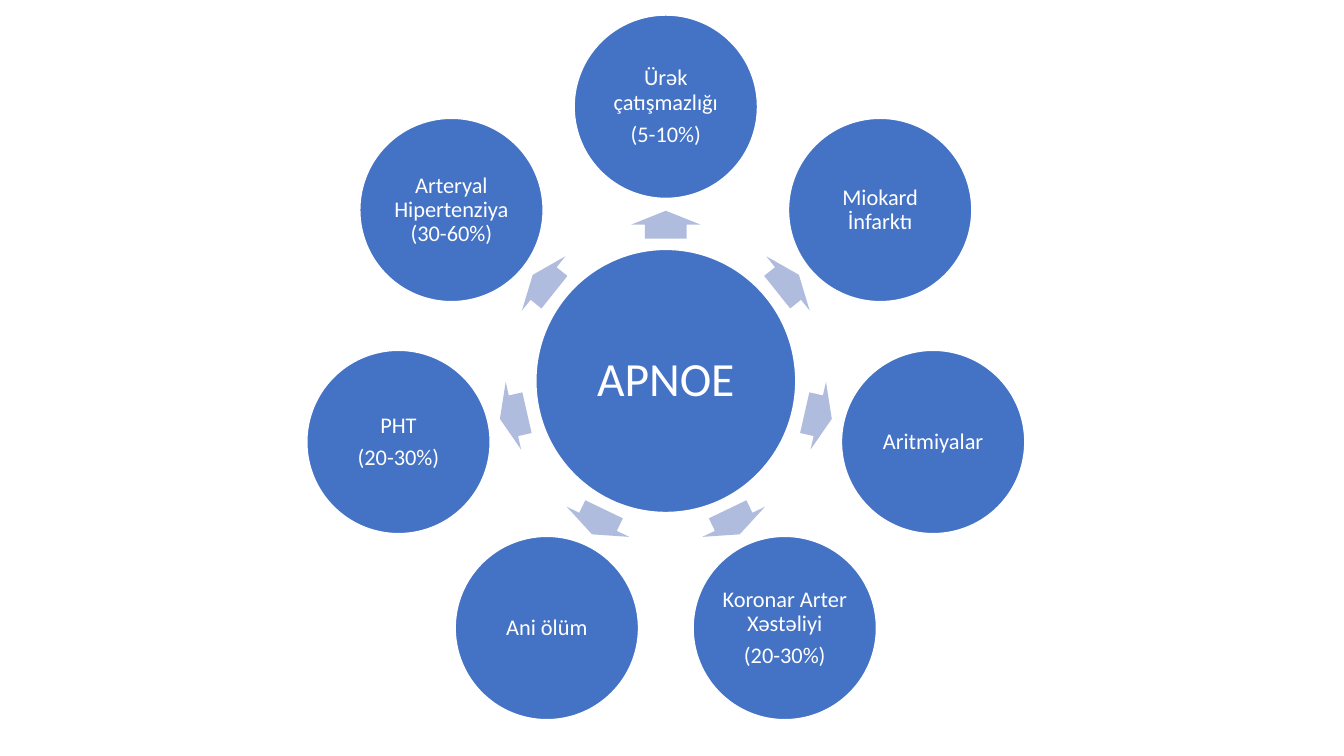
import math
from pptx import Presentation
from pptx import util as u
from pptx.dml.color import RGBColor
from pptx.enum import shapes, text

# Content, clockwise from the top
HUB = ["APNOE"]
CONDITIONS = [
    ["Ürək çatışmazlığı", "(5-10%)"],
    ["Miokard İnfarktı"],
    ["Aritmiyalar"],
    ["Koronar Arter Xəstəliyi", "(20-30%)"],
    ["Ani ölüm"],
    ["PHT", "(20-30%)"],
    ["Arteryal Hipertenziya (30-60%)"],
]

THEME = dict(font="Calibri", circle="4472C4", arrow="B0BCDE", white="FFFFFF",
             hub_size=34, size=16)

# Geometry in centimetres
CENTER = (16.78, 9.6)
HUB_SIZE = (6.55, 6.63)
CIRCLE_SIZE = (4.62, 4.62)
ARROW_SIZE = (0.7, 1.75)
CIRCLE_RADIUS, ARROW_RADIUS = 6.91, 3.94


def set_all(obj, values):
    for name, value in values.items():
        setattr(obj, name, value)


def on_ring(radius, angle):
    a = math.radians(angle)
    return CENTER[0] + radius * math.cos(a), CENTER[1] + radius * math.sin(a)


def add_centered(s, kind, center, size, fill):
    w, h = size
    sp = s.shapes.add_shape(kind, u.Cm(center[0] - w / 2), u.Cm(center[1] - h / 2),
                            u.Cm(w), u.Cm(h))
    sp.shadow.inherit = False
    sp.fill.solid()
    sp.fill.fore_color.rgb = RGBColor.from_string(THEME[fill])
    return sp


def add_circle(s, center, size, lines, pt, inset):
    sp = add_centered(s, shapes.MSO_SHAPE.OVAL, center, size, "circle")
    sp.line.color.rgb = RGBColor.from_string(THEME["white"])
    sp.line.width = u.Pt(1)
    tf = sp.text_frame
    sides = ("left", "top", "right", "bottom")
    set_all(tf, {f"margin_{side}": u.Cm(inset) for side in sides})
    set_all(tf, dict(word_wrap=True, vertical_anchor=text.MSO_ANCHOR.MIDDLE))
    for i, line in enumerate(lines):
        p = tf.paragraphs[0] if i == 0 else tf.add_paragraph()
        set_all(p, dict(alignment=text.PP_ALIGN.CENTER, line_spacing=0.9,
                        space_after=u.Pt(round(pt * 0.35, 1))))
        r = p.add_run()
        r.text = line
        set_all(r.font, dict(name=THEME["font"], size=u.Pt(pt)))
        r.font.color.rgb = RGBColor.from_string(THEME["white"])


def add_arrow(s, angle):
    sp = add_centered(s, shapes.MSO_SHAPE.RIGHT_ARROW, on_ring(ARROW_RADIUS, angle),
                      ARROW_SIZE, "arrow")
    sp.line.fill.background()
    sp.adjustments[0], sp.adjustments[1] = 0.6, 0.5
    sp.rotation = angle % 360


def main():
    prs = Presentation()
    set_all(prs, dict(slide_width=u.Cm(33.87), slide_height=u.Cm(19.05)))
    s = prs.slides.add_slide(prs.slide_layouts[6])

    # Hub
    add_circle(s, CENTER, HUB_SIZE, HUB, THEME["hub_size"], 0.12)

    # Ring of arrows and conditions
    for i, lines in enumerate(CONDITIONS):
        angle = -90 + i * 360 / len(CONDITIONS)
        add_arrow(s, angle)
        add_circle(s, on_ring(CIRCLE_RADIUS, angle), CIRCLE_SIZE, lines,
                   THEME["size"], 0.05)

    prs.save("out.pptx")


if __name__ == "__main__":
    main()
